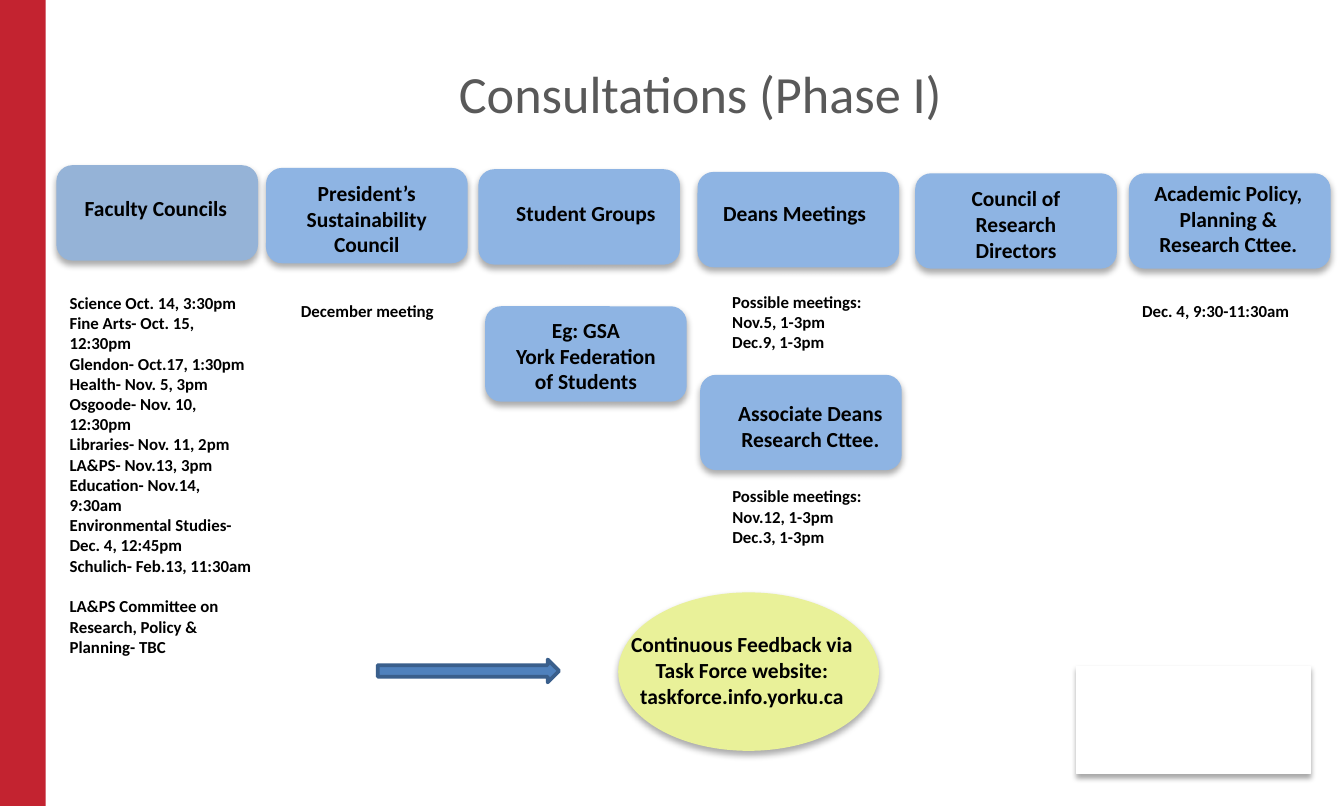
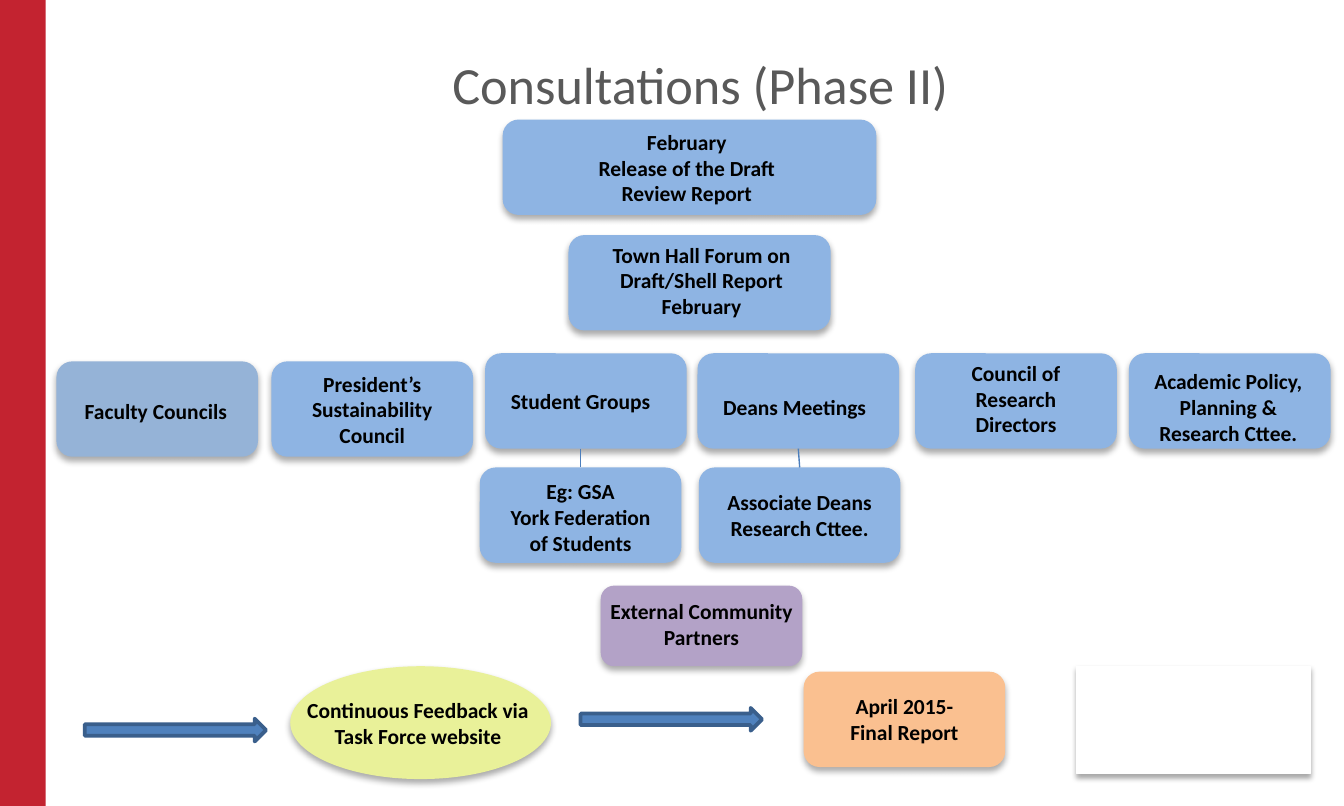
from pptx import Presentation
from pptx.dml.color import RGBColor
from pptx.enum.shapes import MSO_CONNECTOR, MSO_SHAPE
from pptx.enum.text import MSO_ANCHOR, PP_ALIGN
from pptx.oxml import parse_xml
from pptx.oxml.ns import nsdecls
from pptx.util import Inches, Pt

RECT, ROUND = MSO_SHAPE.RECTANGLE, MSO_SHAPE.ROUNDED_RECTANGLE
OVAL, ARROW = MSO_SHAPE.OVAL, MSO_SHAPE.RIGHT_ARROW
STRAIGHT = MSO_CONNECTOR.STRAIGHT
LEFT, CENTER = PP_ALIGN.LEFT, PP_ALIGN.CENTER
TOP, MIDDLE = MSO_ANCHOR.TOP, MSO_ANCHOR.MIDDLE

FONT = "Calibri"
COLORS = {
    "band": "C32330", "white": "FFFFFF", "black": "000000", "title": "595959",
    "steel": "95B3D7", "blue": "8EB4E3", "lime": "E9F199", "purple": "B3A2C7",
    "peach": "FAC090", "arrow": "4F81BD", "edge": "3A5F8C", "link": "4B7EBC",
}
NODE_W, NODE_H = 1.5, 0.71
LABEL_W = 1.32
HEADS = [
    ("Faculty Councils", "steel", CENTER),
    ("President’s Sustainability Council", "blue", CENTER),
    ("Student Groups", "blue", CENTER),
    ("Deans Meetings", "blue", LEFT),
    ("Council of Research Directors", "blue", CENTER),
    ("Academic Policy, Planning & Research Cttee.", "blue", CENTER),
]
GROUPS = "Eg: GSA\nYork Federation of Students"
DEANS = "Associate Deans Research Cttee."
DATES = [
    "Science Oct. 14, 3:30pm", "Fine Arts- Oct. 15, 12:30pm",
    "Glendon- Oct.17, 1:30pm", "Health- Nov. 5, 3pm",
    "Osgoode- Nov. 10, 12:30pm", "Libraries- Nov. 11, 2pm",
    "LA&PS- Nov.13, 3pm", "Education- Nov.14, 9:30am",
    "Environmental Studies- Dec. 4, 12:45pm", "Schulich- Feb.13, 11:30am",
    "LA&PS Committee on Research, Policy & Planning- TBC",
]


def color(name):
    return RGBColor.from_string(COLORS[name])


def shade(shape, alpha, blur, drop):
    shape.shadow.inherit = False
    effects = shape._element.spPr.find(
        "{http://schemas.openxmlformats.org/drawingml/2006/main}effectLst")
    effects.append(parse_xml(
        f'<a:outerShdw {nsdecls("a")} blurRad="{Pt(blur)}" dist="{Pt(drop)}" '
        f'dir="5400000" algn="ctr" rotWithShape="0"><a:srgbClr val="{COLORS["black"]}">'
        f'<a:alpha val="{alpha * 1000}"/></a:srgbClr></a:outerShdw>'))


def block(slide, kind, box, fill, line=None, weight=0.75):
    shape = slide.shapes.add_shape(kind, *map(Inches, box))
    shape.shadow.inherit = False
    shape.fill.solid()
    shape.fill.fore_color.rgb = color(fill)
    if line:
        shape.line.color.rgb = color(line)
        shape.line.width = Pt(weight)
    else:
        shape.line.fill.background()
    return shape


def write(shape, text, size, align=CENTER, tint="black", bold=True, anchor=TOP):
    frame = shape.text_frame
    frame.word_wrap = True
    frame.vertical_anchor = anchor
    frame.text = text
    for par in frame.paragraphs:
        par.alignment = align
        for run in par.runs:
            run.font.name = FONT
            run.font.size = Pt(size)
            run.font.bold = bold
            run.font.color.rgb = color(tint)
    return frame


def label(slide, box, text, size=11.5, align=CENTER, **style):
    shape = slide.shapes.add_textbox(*map(Inches, box))
    return write(shape, text, size, align, **style)


def note(slide, box, text):
    return label(slide, box, text, 9, LEFT)


def node(slide, box, text, shift, fill="blue", align=CENTER, span=LABEL_W):
    shape = block(slide, ROUND, box, fill)
    shade(shape, 32, 3.5, 2.2)
    frame = write(shape, text, 11.5, align)
    dx, dy = shift
    frame.margin_left = Inches(max(0, dx + 0.065))
    frame.margin_right = Inches(max(0, box[2] - dx - span + 0.065))
    frame.margin_top = Inches(dy + 0.015)
    frame.margin_bottom = 0
    return shape


def heads(slide, places):
    return [
        node(slide, (x, y, NODE_W, NODE_H), text, (dx, dy), fill, align)
        for (text, fill, align), (x, y, dx, dy) in zip(HEADS, places)
    ]


def web(slide, box, text, shift, height):
    shade(block(slide, OVAL, box, "lime"), 32, 3.5, 2.2)
    label(slide, (box[0] + shift[0], box[1] + shift[1], 2.02, height), text)


def arrow(slide, left, top):
    block(slide, ARROW, (left, top, 1.35, 0.17), "arrow", "edge", 2)


def link(slide, upper, lower):
    mid = lower.left + lower.width // 2
    line = slide.shapes.add_connector(
        STRAIGHT, mid, upper.top + upper.height, mid, lower.top)
    if abs(upper.left + upper.width // 2 - mid) < Inches(0.02):
        line.begin_connect(upper, 2)
    line.end_connect(lower, 0)
    line.line.color.rgb = color("link")
    line.line.width = Pt(0.75)
    line._element.spPr.append(parse_xml(f'<a:effectLst {nsdecls("a")}/>'))


def base(deck, title, height):
    slide = deck.slides.add_slide(deck.slide_layouts[6])
    block(slide, RECT, (0, 0, 0.34, 6), "band")
    panel = block(slide, RECT, (8.01, 4.96, 1.74, 0.8), "white", "white")
    shade(panel, 35, 3.1, 1.8)
    label(slide, (0.75, 0.24, 8.92, height), title, 28,
          tint="title", bold=False, anchor=MIDDLE)
    return slide


def phase_one(deck):
    slide = base(deck, "Consultations (Phase I)", 0.9)
    heads(slide, [
        (0.42, 1.23, 0.08, 0.17), (1.98, 1.25, 0.09, 0.04),
        (3.56, 1.26, 0.14, 0.18), (5.19, 1.28, 0.09, 0.16),
        (6.81, 1.29, 0.09, 0.04), (8.4, 1.29, 0.08, 0),
    ])
    node(slide, (3.61, 2.28, NODE_W, NODE_H), GROUPS, (0.09, 0.03))
    node(slide, (5.21, 2.79, NODE_W, NODE_H), DEANS, (0.16, 0.14))
    dates = note(slide, (0.42, 2.13, 1.57, 2.98), "\n".join(DATES))
    dates.paragraphs[-1].space_before = Pt(11)
    note(slide, (2.14, 2.19, 1.2, 0.56), "December meeting")
    note(slide, (5.35, 2.12, 1.2, 0.86),
         "Possible meetings: Nov.5, 1-3pm\nDec.9, 1-3pm")
    note(slide, (5.35, 3.57, 1.32, 0.86),
         "Possible meetings:\nNov.12, 1-3pm\nDec.3, 1-3pm")
    note(slide, (8.4, 2.19, 1.5, 0.71), "Dec. 4, 9:30-11:30am")
    arrow(slide, 2.81, 4.91)
    web(slide, (4.6, 4.41, 1.94, 1.18),
        "Continuous Feedback via Task Force website: taskforce.info.yorku.ca",
        (-0.09, 0.24), 0.68)


def phase_two(deck):
    slide = base(deck, "Consultations (Phase II)", 0.76)
    node(slide, (3.74, 0.89, 2.78, NODE_H),
         "February\nRelease of the Draft Review Report", (0.44, 0.02), span=1.86)
    node(slide, (4.23, 1.75, 1.95, NODE_H),
         "Town Hall Forum on Draft/Shell Report\nFebruary", (0.06, 0), span=1.86)
    row = heads(slide, [
        (0.42, 2.69, 0.08, 0.22), (2.02, 2.69, 0.09, 0.02),
        (3.61, 2.63, 0.05, 0.21), (5.19, 2.63, 0.09, 0.25),
        (6.81, 2.63, 0.09, 0), (8.4, 2.63, 0.08, 0.06),
    ])
    groups = node(slide, (3.57, 3.48, NODE_W, NODE_H), GROUPS, (0.09, 0.03))
    deans = node(slide, (5.2, 3.48, NODE_W, NODE_H), DEANS, (0.09, 0.11))
    link(slide, row[2], groups)
    link(slide, row[3], deans)
    node(slide, (4.47, 4.36, NODE_W, 0.6), "External Community Partners",
         (-0.11, 0.05), "purple", span=1.68)
    arrow(slide, 0.63, 5.35)
    web(slide, (2.16, 4.96, 1.94, 0.84),
        "Continuous Feedback via Task Force website", (-0.06, 0.18), 0.49)
    arrow(slide, 4.32, 5.27)
    node(slide, (5.98, 5, NODE_W, NODE_H), "April 2015-\nFinal Report",
         (-0.16, 0.11), "peach", span=1.81)


def main():
    deck = Presentation()
    deck.slide_width, deck.slide_height = Inches(10), Inches(6)
    phase_one(deck)
    phase_two(deck)
    deck.save("out.pptx")


if __name__ == "__main__":
    main()
